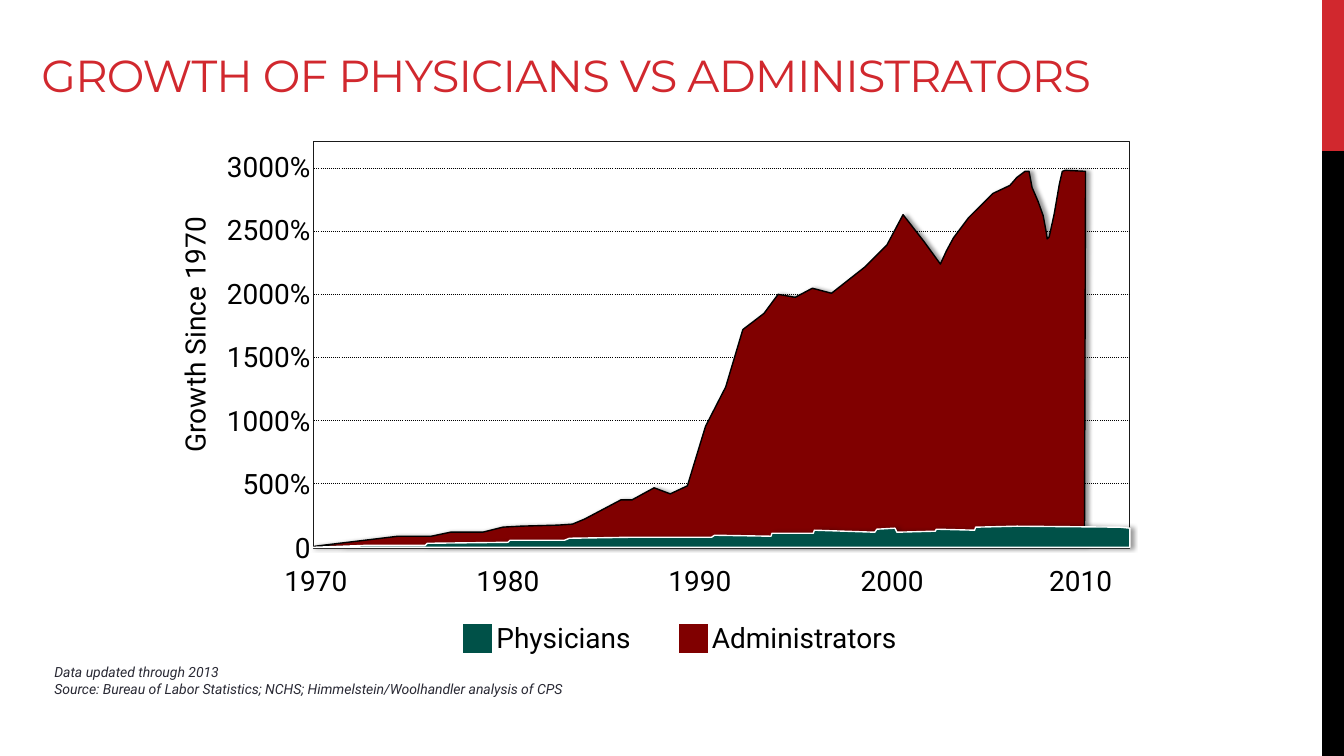
"""Build a slide with an area chart drawn from shapes: physicians against administrators."""
from lxml import etree
from pptx import Presentation
from pptx.dml.color import RGBColor
from pptx.enum.shapes import MSO_SHAPE
from pptx.enum.text import MSO_ANCHOR, PP_ALIGN
from pptx.oxml.ns import qn
from pptx.util import Cm, Pt

RECTANGLE = MSO_SHAPE.RECTANGLE
LEFT, CENTER, RIGHT = PP_ALIGN.LEFT, PP_ALIGN.CENTER, PP_ALIGN.RIGHT
TOP, MIDDLE, BOTTOM = MSO_ANCHOR.TOP, MSO_ANCHOR.MIDDLE, MSO_ANCHOR.BOTTOM

COLORS = {
    "red": "D1282E", "black": "000000", "white": "FFFFFF", "frame": "1A1A1A",
    "note": "292934", "physicians": "005148", "administrators": "800000",
}
TITLE_FORMAT = {"name": "Montserrat", "size": Pt(32), "bold": False}
LABEL_FORMAT = {"name": "Roboto", "size": Pt(20)}
NOTE_FORMAT = {"name": "Roboto", "size": Pt(10), "italic": True}

AREA_SCALE = Cm(0.0254)
ADMINISTRATORS_OUTLINE = [
    (312, 542), (395, 532), (428, 532), (447, 528), (479, 528), (499, 523),
    (517, 522), (554, 521), (568, 520), (580, 515), (616, 496), (627, 496),
    (649, 484), (665, 490), (682, 482), (700, 423), (720, 384), (737, 327),
    (758, 311), (772, 292), (789, 295), (806, 286), (825, 291), (858, 265),
    (880, 243), (896, 213), (917, 240), (933, 262), (939, 249), (946, 236),
    (961, 216), (975, 202), (985, 192), (1002, 184), (1009, 176), (1017, 170),
    (1021, 170), (1024, 186), (1030, 200), (1035, 214), (1038, 230), (1039, 237),
    (1041, 235), (1046, 212), (1051, 183), (1054, 170), (1057, 169), (1077, 170),
    (1076, 542),
]
PHYSICIANS_OUTLINE = [
    (310, 543), (1121, 543), (1121, 524), (1111, 523), (1009, 522), (968, 523),
    (967, 526), (929, 525), (928, 527), (890, 528), (888, 524), (870, 525),
    (868, 528), (808, 526), (807, 529), (766, 529), (765, 532), (709, 531),
    (706, 533), (626, 533), (565, 534), (560, 536), (506, 536), (504, 538),
    (424, 539), (422, 541), (364, 541),
]


def rgb(color):
    """Return the named colour."""
    return RGBColor.from_string(COLORS[color])


def paint(shape, fill, line=None, width=0.75):
    """Set the fill and outline of a shape and drop its theme shadow."""
    shape.shadow.inherit = False
    shape.fill.solid()
    shape.fill.fore_color.rgb = rgb(fill)
    if line:
        shape.line.color.rgb = rgb(line)
        shape.line.width = Pt(width)
    else:
        shape.line.fill.background()


def add_box(slide, left, top, width, height, fill, line=None):
    """Add a rectangle measured in centimetres."""
    box = slide.shapes.add_shape(RECTANGLE, Cm(left), Cm(top), Cm(width), Cm(height))
    paint(box, fill, line)


def write(text_frame, lines, text_format, color, align=LEFT, anchor=TOP):
    """Write one paragraph per line with a common format."""
    text_frame.word_wrap = True
    text_frame.vertical_anchor = anchor
    for index, line in enumerate(lines):
        paragraph = text_frame.add_paragraph() if index else text_frame.paragraphs[0]
        paragraph.alignment = align
        run = paragraph.add_run()
        run.text = line
        for name, value in text_format.items():
            setattr(run.font, name, value)
        run.font.color.rgb = rgb(color)


def add_label(slide, left, top, width, lines, text_format=LABEL_FORMAT, color="black",
              align=LEFT, anchor=TOP, rotation=0):
    """Add a text box measured in centimetres."""
    label = slide.shapes.add_textbox(Cm(left), Cm(top), Cm(width), Cm(1.12))
    label.rotation = rotation
    write(label.text_frame, lines, text_format, color, align, anchor)


def set_border(cell, position, side, dotted):
    """Give one side of a cell a dotted line or none."""
    line = etree.Element(qn(f"a:{side}"), w=str(Pt(0.75)))
    if dotted:
        fill = etree.SubElement(line, qn("a:solidFill"))
        etree.SubElement(fill, qn("a:srgbClr"), val=COLORS["black"])
        etree.SubElement(line, qn("a:prstDash"), val="sysDot")
    else:
        etree.SubElement(line, qn("a:noFill"))
    cell._tc.get_or_add_tcPr().insert(position, line)


def add_plain_table(slide, left, top, column_width, row_height, rows, align=LEFT, dotted=False):
    """Add an unfilled table, with dotted horizontal rules if wanted."""
    row_count, column_count = len(rows), len(rows[0])
    table = slide.shapes.add_table(
        row_count, column_count, Cm(left), Cm(top),
        Cm(column_width * column_count), Cm(row_height * row_count)).table
    table.first_row = table.horz_banding = False
    for row_index, row in enumerate(rows):
        for column_index, text in enumerate(row):
            cell = table.cell(row_index, column_index)
            cell.fill.background()
            for position, side in enumerate(("lnL", "lnR", "lnT", "lnB")):
                set_border(cell, position, side, dotted and side in ("lnT", "lnB"))
            if text:
                write(cell.text_frame, [text], LABEL_FORMAT, "black", align)


def add_area(slide, outline, fill, line):
    """Draw a closed area with a soft shadow to its right."""
    builder = slide.shapes.build_freeform(*outline[0], scale=AREA_SCALE)
    builder.add_line_segments(outline[1:], close=True)
    area = builder.convert_to_shape()
    paint(area, fill, line, 1)
    effects = area._element.spPr.find(qn("a:effectLst"))
    shadow = etree.SubElement(effects, qn("a:outerShdw"), blurRad=str(Pt(3.1)),
                              dist=str(Pt(1.8)), dir="0", algn="l", rotWithShape="0")
    color = etree.SubElement(shadow, qn("a:srgbClr"), val=COLORS["black"])
    etree.SubElement(color, qn("a:alpha"), val="40000")


def set_title(slide, text):
    """Place and format the title placeholder."""
    title = slide.shapes.title
    title.left, title.top, title.width, title.height = Cm(0.79), Cm(0.66), Cm(31.67), Cm(2.03)
    write(title.text_frame, [text], TITLE_FORMAT, "red", LEFT, BOTTOM)
    title.text_frame.paragraphs[0].runs[0].font._element.set("spc", "-60")


def main():
    """Build and save the slide."""
    presentation = Presentation()
    presentation.slide_width, presentation.slide_height = Cm(33.87), Cm(19.05)
    slide = presentation.slides.add_slide(presentation.slide_layouts[5])

    add_box(slide, 33.32, 0, 0.55, 3.81, "red")
    add_box(slide, 33.32, 3.81, 0.55, 15.24, "black")
    set_title(slide, "GROWTH OF PHYSICIANS VS ADMINISTRATORS")

    add_box(slide, 7.9, 3.56, 20.57, 10.26, "white", "frame")
    add_plain_table(slide, 7.92, 4.24, 20.55, 1.59, [[""]] * 5, dotted=True)

    add_label(slide, 1.12, 16.59, 23.83, [
        "Data updated through 2013",
        "Source: Bureau of Labor Statistics; NCHS; Himmelstein/Woolhandler analysis of CPS",
    ], NOTE_FORMAT, "note", anchor=MIDDLE)
    add_label(slide, 1.65, 7.87, 6.53, ["Growth Since 1970"], align=CENTER, rotation=270)

    for left, name, width in ((11.66, "Physicians", 4.52), (17.09, "Administrators", 6.53)):
        add_box(slide, left, 15.7, 0.76, 0.76, name.lower(), "white")
        add_label(slide, left + 0.6, 15.52, width, [name])

    percentages = [[f"{value}%" if value else "0"] for value in range(3000, -1, -500)]
    add_plain_table(slide, 5.11, 3.68, 2.97, 1.6, percentages, RIGHT)
    years = ["1970", "1980", "1990", "2000", "2010 "]
    add_plain_table(slide, 5.54, 14.12, 4.84, 1.09, [years], CENTER)

    add_area(slide, ADMINISTRATORS_OUTLINE, "administrators", "black")
    add_area(slide, PHYSICIANS_OUTLINE, "physicians", "white")
    presentation.save("out.pptx")


if __name__ == "__main__":
    main()
